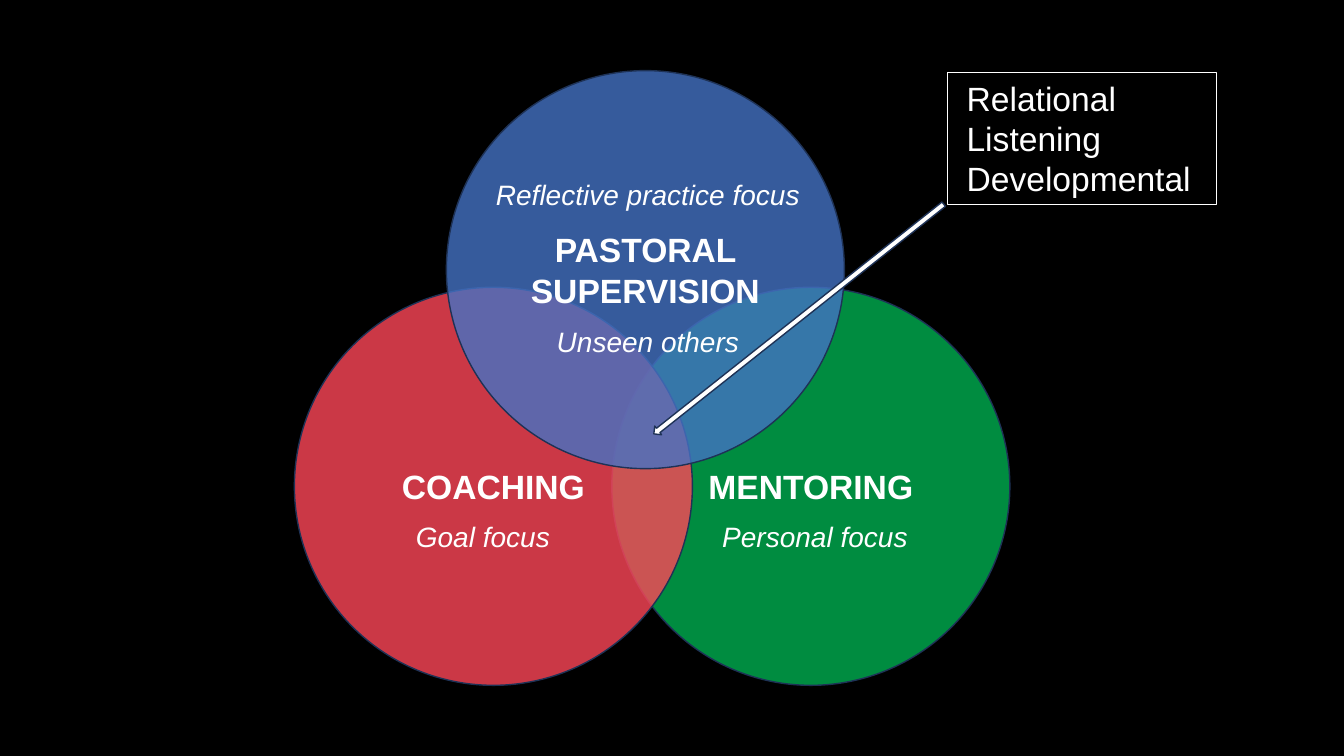
from lxml.etree import SubElement
from pptx import Presentation
from pptx.dml.color import RGBColor
from pptx.enum.shapes import MSO_SHAPE
from pptx.enum.text import MSO_ANCHOR, PP_ALIGN
from pptx.oxml.ns import qn
from pptx.util import Cm, Pt


def paint(color_format, color):
    color_format.rgb = RGBColor.from_string(color)


class VennSlide:
    """Draws overlapping circles, captions and a callout in one style."""

    font = "Arial"
    text_color = "FFFFFF"
    outline = "1E3256"
    diameter = 10.03
    opacity = 80

    def __init__(self, slide, background):
        self.slide = slide
        slide.background.fill.solid()
        paint(slide.background.fill.fore_color, background)

    def shape(self, preset, left, top, width, height, fill, line, line_width):
        shape = self.slide.shapes.add_shape(
            preset, Cm(left), Cm(top), Cm(width), Cm(height))
        shape.shadow.inherit = False
        if fill:
            shape.fill.solid()
            paint(shape.fill.fore_color, fill)
        else:
            shape.fill.background()
        paint(shape.line.color, line)
        shape.line.width = Pt(line_width)
        return shape

    def set_text(self, frame, lines, size, align, bold=False, italic=False):
        frame.word_wrap = True
        frame.text = "\n".join(lines)
        for paragraph in frame.paragraphs:
            paragraph.alignment = align
            font = paragraph.font
            font.name, font.size = self.font, Pt(size)
            font.bold, font.italic = bold, italic
            paint(font.color, self.text_color)

    def circle(self, left, top, label, fill):
        circle = self.shape(MSO_SHAPE.OVAL, left, top, self.diameter,
                            self.diameter, fill, self.outline, 1)
        color = circle.element.spPr.find(qn("a:solidFill"))[0]
        SubElement(color, qn("a:alpha"), val=str(self.opacity * 1000))
        circle.text_frame.vertical_anchor = MSO_ANCHOR.MIDDLE
        self.set_text(circle.text_frame, [label], 24, PP_ALIGN.CENTER, bold=True)

    def caption(self, left, top, width, text):
        frame = self.slide.shapes.add_textbox(
            Cm(left), Cm(top), Cm(width), Cm(1.27)).text_frame
        frame.margin_left, frame.margin_top = Cm(0.48), Cm(0.25)
        self.set_text(frame, [text], 20, PP_ALIGN.CENTER, italic=True)

    def arrow(self, left, top, width, length, rotation):
        arrow = self.shape(MSO_SHAPE.DOWN_ARROW, left, top, width, length,
                           self.text_color, self.outline, 1)
        arrow.rotation = rotation

    def callout(self, left, top, width, height, lines):
        callout = self.shape(MSO_SHAPE.RECTANGLE, left, top, width, height,
                             None, self.text_color, 0.75)
        frame = callout.text_frame
        frame.margin_left = Cm(0.48)
        frame.vertical_anchor = MSO_ANCHOR.TOP
        self.set_text(frame, lines, 24, PP_ALIGN.LEFT)


def main():
    deck = Presentation()
    deck.slide_width, deck.slide_height = Cm(33.87), Cm(19.05)
    venn = VennSlide(deck.slides.add_slide(deck.slide_layouts[6]), "000000")

    for left, top, practice, fill in [
        (15.42, 7.24, "MENTORING", "00B050"),
        (7.42, 7.24, "COACHING", "FE4658"),
        (11.25, 1.78, "PASTORAL SUPERVISION", "4472C4"),
    ]:
        venn.circle(left, top, practice, fill)

    venn.arrow(19.99, 3.38, 0.28, 9.32, 51.6)
    venn.callout(23.88, 1.83, 6.78, 3.33,
                 ["Relational", "Listening", "Developmental"])

    for left, top, width, focus in [
        (17.25, 12.85, 6.35, "Personal focus"),
        (9.35, 12.85, 5.41, "Goal focus"),
        (11.2, 4.22, 10.03, "Reflective practice focus"),
        (11.2, 7.92, 10.03, "Unseen others"),
    ]:
        venn.caption(left, top, width, focus)

    deck.save("out.pptx")


if __name__ == "__main__":
    main()
